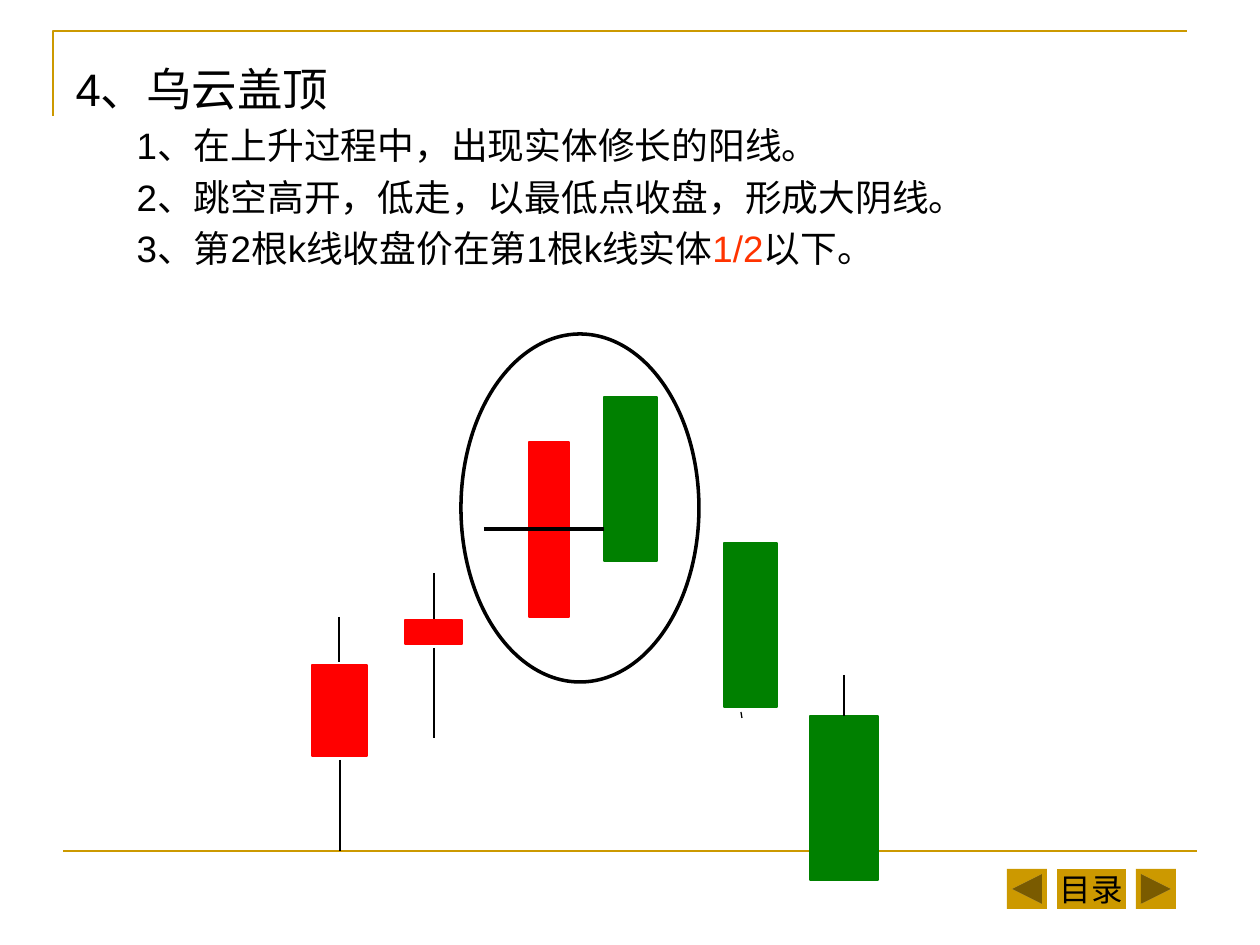
from lxml.etree import SubElement
from pptx import Presentation
from pptx.dml.color import RGBColor
from pptx.enum.shapes import MSO_CONNECTOR, MSO_SHAPE
from pptx.enum.text import MSO_ANCHOR, MSO_AUTO_SIZE, PP_ALIGN
from pptx.oxml.ns import qn
from pptx.util import Pt

PX = 914400 / 126
GOLD = RGBColor(0xCC, 0x99, 0x00)
BLACK = RGBColor(0x00, 0x00, 0x00)
RED = RGBColor(0xFF, 0x00, 0x00)
GREEN = RGBColor(0x00, 0x80, 0x00)
ORANGE = RGBColor(0xFF, 0x33, 0x00)
FONT = "Arial"

HEADING = "4、乌云盖顶"
POINTS = [
    [("1、在上升过程中，出现实体修长的阳线。", BLACK)],
    [("2、跳空高开，低走，以最低点收盘，形成大阴线。", BLACK)],
    [("3、第2根k线收盘价在第1根k线实体", BLACK), ("1/2", ORANGE), ("以下。", BLACK)],
]
CANDLES = [
    (RED, (312, 665, 55, 91), [(339, 617, 339, 662), (340, 760, 340, 851)]),
    (RED, (405, 620, 57, 24), [(434, 573, 434, 619), (434, 648, 434, 738)]),
    (GREEN, (604, 397, 53, 164), []),
    (GREEN, (724, 543, 53, 164), [(741, 712, 742, 718)]),
    (RED, (529, 442, 40, 175), []),
]
LAST_CANDLE = (810, 716, 68, 164)


def px(n):
    return round(n * PX)


def add_run(p, text, size, color):
    r = p.add_run()
    r.text = text
    r.font.name = FONT
    r.font.size = Pt(size)
    r.font.color.rgb = color


def add_paragraph(p, runs, size, indent):
    pPr = p._p.get_or_add_pPr()
    pPr.set("marL", str(px(indent)))
    pPr.set("indent", "0")
    SubElement(pPr, qn("a:buNone"))
    for text, color in runs:
        add_run(p, text, size, color)


def add_body(s):
    title = s.shapes.title._element
    title.getparent().remove(title)
    sp = s.placeholders[1]
    sp.left, sp.top, sp.width, sp.height = map(px, (63, 55, 1134, 789))
    tf = sp.text_frame
    tf.auto_size = MSO_AUTO_SIZE.NONE
    add_paragraph(tf.paragraphs[0], [(HEADING, BLACK)], 26, 0)
    for runs in POINTS:
        add_paragraph(tf.add_paragraph(), runs, 21, 61)


def add_line(s, x1, y1, x2, y2, color=BLACK, width=0.75):
    c = s.shapes.add_connector(MSO_CONNECTOR.STRAIGHT, px(x1), px(y1), px(x2), px(y2))
    c.line.color.rgb = color
    c.line.width = Pt(width)
    SubElement(c._element.spPr, qn("a:effectLst"))
    return c


def add_shape(s, kind, box, fill=None, line=None, width=0.75):
    sp = s.shapes.add_shape(kind, *map(px, box))
    sp.shadow.inherit = False
    if fill is None:
        sp.fill.background()
    else:
        sp.fill.solid()
        sp.fill.fore_color.rgb = fill
    if line is None:
        sp.line.fill.background()
    else:
        sp.line.color.rgb = line
        sp.line.width = Pt(width)
    return sp


def add_candle(s, color, box, wicks=()):
    sp = add_shape(s, MSO_SHAPE.RECTANGLE, box, color, color)
    for wick in wicks:
        add_line(s, *wick)
    return sp


def add_frame(s):
    fb = s.shapes.build_freeform(px(53), px(116))
    fb.add_line_segments([(px(53), px(31)), (px(1187), px(31))], close=False)
    sp = fb.convert_to_shape()
    sp.shadow.inherit = False
    sp.fill.background()
    sp.line.color.rgb = GOLD
    sp.line.width = Pt(1.5)
    add_line(s, 63, 851, 1197, 851, GOLD, 1.5)


def add_navigation(s):
    menu = add_shape(s, MSO_SHAPE.ACTION_BUTTON_CUSTOM, (1057, 869, 69, 40), GOLD)
    tf = menu.text_frame
    tf.word_wrap = False
    tf.vertical_anchor = MSO_ANCHOR.MIDDLE
    p = tf.paragraphs[0]
    p.alignment = PP_ALIGN.CENTER
    add_run(p, "目录", 18, BLACK)
    add_shape(s, MSO_SHAPE.ACTION_BUTTON_BACK_OR_PREVIOUS, (1007, 869, 40, 40), GOLD)
    add_shape(s, MSO_SHAPE.ACTION_BUTTON_FORWARD_OR_NEXT, (1136, 869, 40, 40), GOLD)


def add_pattern(s):
    for color, box, wicks in CANDLES:
        add_candle(s, color, box, wicks)
    last = add_candle(s, GREEN, LAST_CANDLE)
    wick = add_line(s, 844, 675, 844, 716)
    wick.end_connect(last, 0)
    add_line(s, 484, 529, 604, 529, width=2)
    add_shape(s, MSO_SHAPE.OVAL, (461, 334, 238, 348), line=BLACK, width=2)


def main():
    prs = Presentation()
    prs.slide_width, prs.slide_height = px(1260), px(945)
    s = prs.slides.add_slide(prs.slide_layouts[1])
    add_frame(s)
    add_navigation(s)
    add_body(s)
    add_pattern(s)
    prs.save("out.pptx")


if __name__ == "__main__":
    main()
